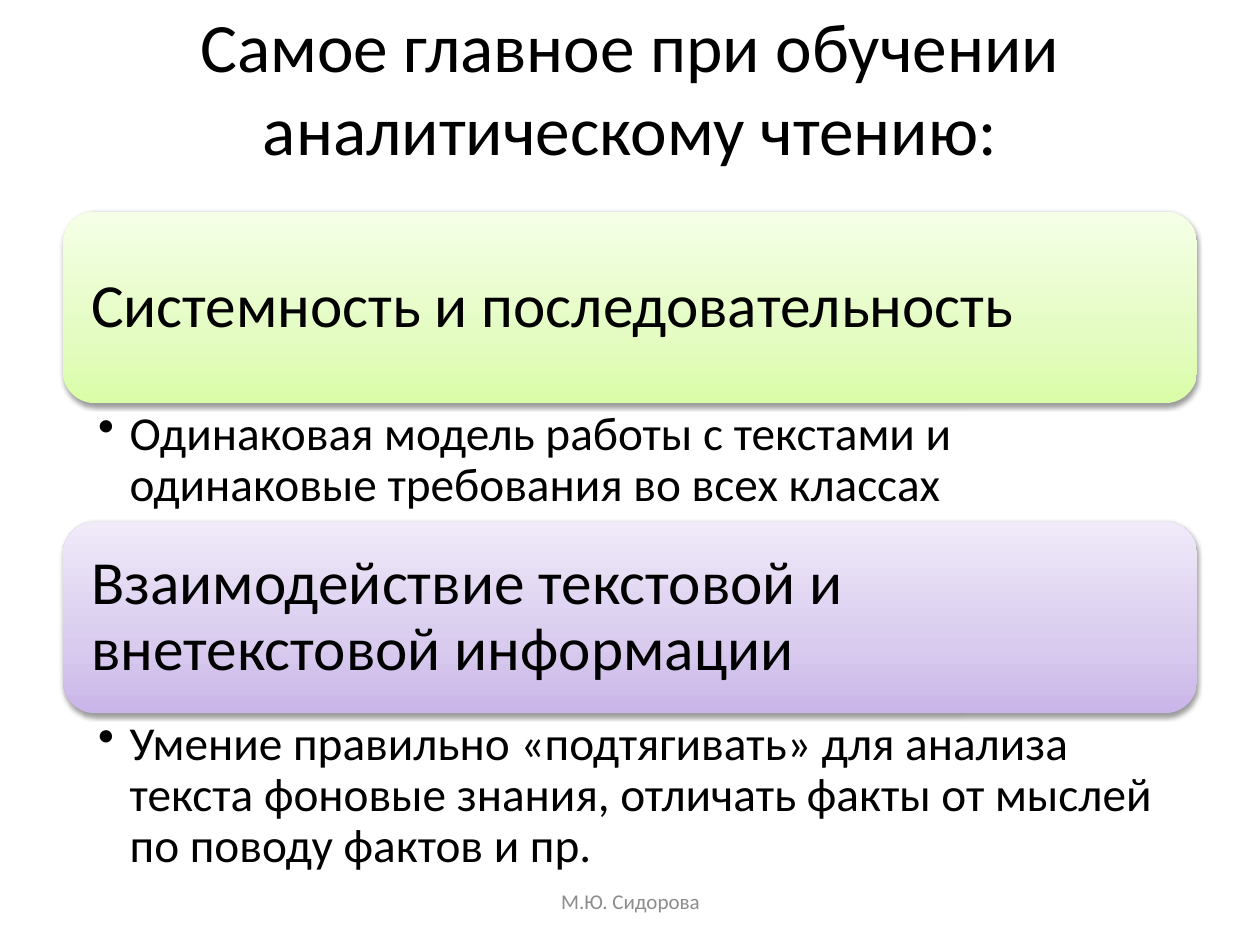
from lxml.etree import SubElement
from pptx import Presentation
from pptx.dml.color import RGBColor
from pptx.enum.shapes import MSO_SHAPE as Shape
from pptx.enum.text import MSO_ANCHOR as Anchor, MSO_AUTO_SIZE as AutoSize, PP_ALIGN as Align
from pptx.oxml import parse_xml
from pptx.oxml.ns import nsdecls, qn
from pptx.util import Inches, Pt

BLACK = RGBColor(0x00, 0x00, 0x00)
GREY = RGBColor(0x8C, 0x8C, 0x8C)
GREENS = [RGBColor(0xDA, 0xFD, 0xA7), RGBColor(0xE4, 0xFC, 0xC2), RGBColor(0xF5, 0xFF, 0xE7)]
PURPLES = [RGBColor(0xC9, 0xB5, 0xE8), RGBColor(0xD8, 0xCB, 0xEE), RGBColor(0xF0, 0xEA, 0xF9)]
STOPS = [0, 35, 100]

FONT = "Calibri"
LEFT, WIDTH = 0.5, 9
BANNER_HEIGHT = 1.52
FIRST_TOP = 1.68

SECTIONS = [
    ("Системность и последовательность", GREENS,
     "Одинаковая модель работы с текстами и одинаковые требования во всех классах", 0.94),
    ("Взаимодействие текстовой и внетекстовой информации", PURPLES,
     "Умение правильно «подтягивать» для анализа текста фоновые знания, "
     "отличать факты от мыслей по поводу фактов и пр.", 1.35),
]


def write_text(shape, text, size, color=BLACK, align=Align.LEFT, anchor=Anchor.MIDDLE,
               insets=(0.1, 0.05), spacing=None):
    """Fill a shape with one paragraph; insets are (sides, top and bottom) in inches."""
    frame = shape.text_frame
    frame.text = text
    frame.word_wrap = True
    frame.auto_size = AutoSize.NONE
    frame.vertical_anchor = anchor
    frame.margin_left = frame.margin_right = Inches(insets[0])
    frame.margin_top = frame.margin_bottom = Inches(insets[1])
    para = frame.paragraphs[0]
    para.alignment = align
    para.line_spacing = spacing
    font = para.runs[0].font
    font.name, font.size = FONT, Pt(size)
    font.color.rgb = color
    return para


def set_gradient(shape, colors):
    """Shade the shape from the bottom (first colour) to the top."""
    stops = "".join(
        f'<a:gs pos="{stop * 1000}"><a:srgbClr val="{color}"/></a:gs>'
        for stop, color in zip(STOPS, colors))
    gradient = parse_xml(
        f'<a:gradFill {nsdecls("a")} rotWithShape="1"><a:gsLst>{stops}</a:gsLst>'
        '<a:lin ang="16200000" scaled="0"/></a:gradFill>')
    shape._element.spPr.find(qn("a:prstGeom")).addnext(gradient)


def set_shadow(shape):
    shape._element.spPr.append(parse_xml(
        f'<a:effectLst {nsdecls("a")}><a:outerShdw blurRad="{Pt(3.1)}" dist="{Pt(1.6)}" '
        'dir="5400000" rotWithShape="0"><a:srgbClr val="000000"><a:alpha val="38000"/>'
        '</a:srgbClr></a:outerShdw></a:effectLst>'))


def add_title(slide, text):
    title = slide.shapes.title
    title.left, title.top = Inches(LEFT), Inches(0.3)
    title.width, title.height = Inches(WIDTH), Inches(0.77)
    write_text(title, text, 39.6, align=Align.CENTER)


def add_banner(slide, top, text, colors):
    banner = slide.shapes.add_shape(Shape.ROUNDED_RECTANGLE, Inches(LEFT), Inches(top),
                                    Inches(WIDTH), Inches(BANNER_HEIGHT))
    set_gradient(banner, colors)
    banner.line.fill.background()
    set_shadow(banner)
    write_text(banner, text, 35, insets=(0.15, 0.15), spacing=0.9)


def add_bullet(slide, top, height, text):
    box = slide.shapes.add_textbox(Inches(LEFT), Inches(top), Inches(WIDTH), Inches(height))
    para = write_text(box, text, 27, anchor=Anchor.TOP, insets=(0.28, 0.05), spacing=0.9)
    properties = para._p.get_or_add_pPr()
    properties.set("marL", str(Inches(0.25)))
    properties.set("indent", str(Inches(-0.25)))
    SubElement(properties, qn("a:buChar"), char="•")


def add_footer(slide, text):
    box = slide.shapes.add_textbox(Inches(3.42), Inches(6.95), Inches(3.17), Inches(0.4))
    write_text(box, text, 12, GREY, Align.CENTER)


def main():
    deck = Presentation()
    deck.slide_width, deck.slide_height = Inches(10), Inches(7.5)
    slide = deck.slides.add_slide(deck.slide_layouts[5])
    add_title(slide, "Самое главное при обучении аналитическому чтению:")
    top = FIRST_TOP
    for heading, colors, detail, detail_height in SECTIONS:
        add_banner(slide, top, heading, colors)
        add_bullet(slide, top + BANNER_HEIGHT, detail_height, detail)
        top += BANNER_HEIGHT + detail_height
    add_footer(slide, "М.Ю. Сидорова")
    deck.save("out.pptx")


if __name__ == "__main__":
    main()
